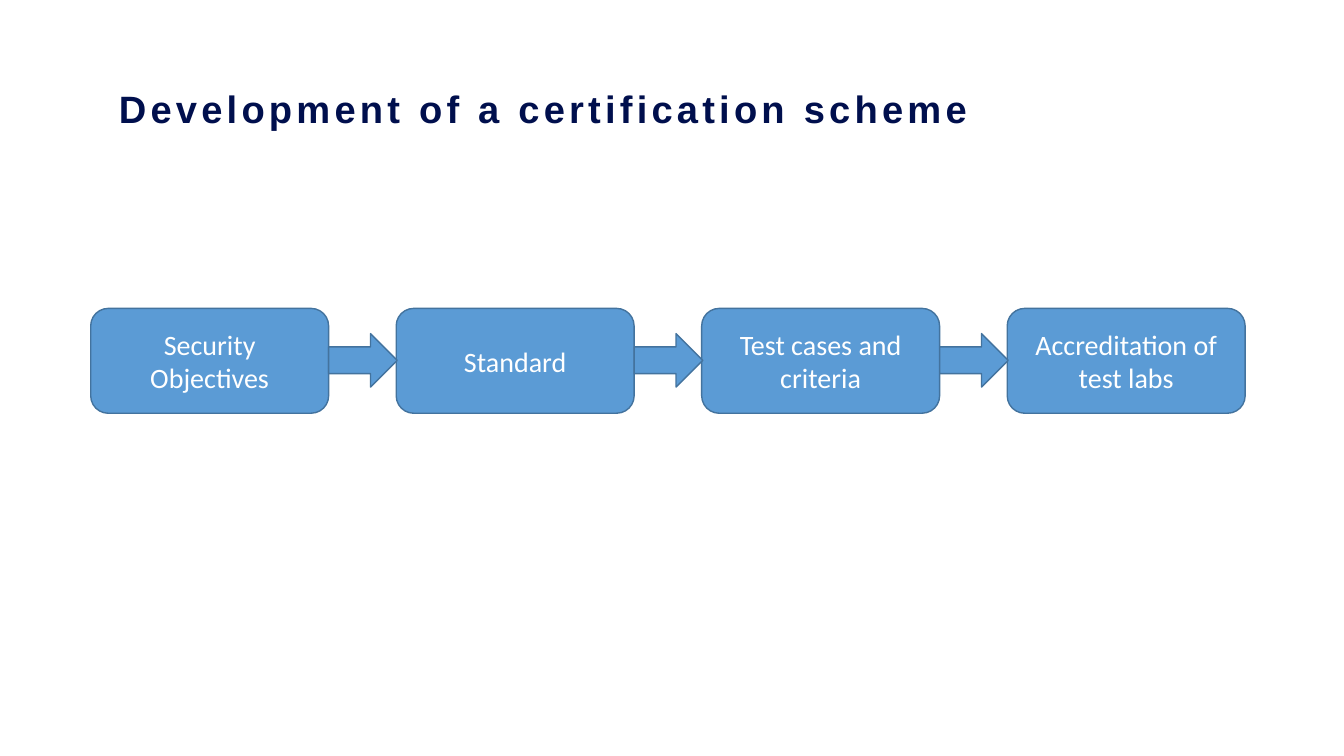
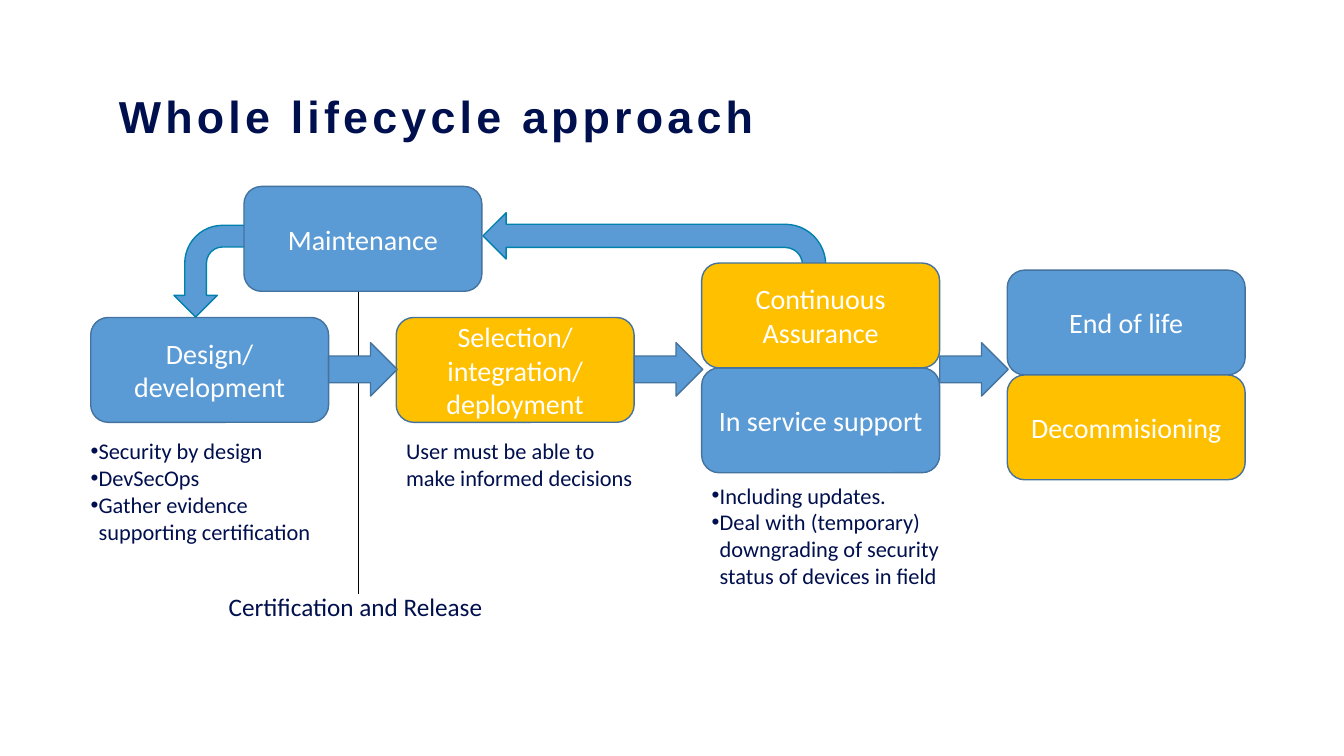
from lxml import etree
from pptx import Presentation
from pptx import util as u
from pptx.dml.color import RGBColor
from pptx.enum import shapes, text
from pptx.oxml import ns

# Shared style
NAVY, BLUE, AMBER, WHITE = "000F4D", "5B9BD5", "FFC000", "FFFFFF"
EDGE, LOOP_EDGE, RULE = "43739E", "0081AD", "000000"
BOX_WIDTH, BOX_HEIGHT = 2.36, 1.04
ARROW_WIDTH, ARROW_HEIGHT, ARROW_DROP = 0.68, 0.53, 0.25
COLUMNS = [0.9 + 3.03 * step for step in range(4)]
KIND = shapes.MSO_SHAPE


def color(value):
    return RGBColor.from_string(value)


def place(left, top, width, height):
    return [u.Inches(length) for length in (left, top, width, height)]


def style_text(para, size, value, font="Calibri"):
    for span in para.runs:
        span.font.size = u.Pt(size)
        span.font.name = font
        span.font.color.rgb = color(value)


def add_title(page, words, size, line_spacing):
    box = page.shapes.add_textbox(*place(1.08, 0.89, 9.29, 0.58))
    box.text_frame.word_wrap = True
    box.text_frame.text = words
    para = box.text_frame.paragraphs[0]
    para.line_spacing = line_spacing
    style_text(para, size, NAVY, "Arial")
    font = para.runs[0].font
    font.bold = True
    para.runs[0]._r.get_or_add_rPr().set("spc", "300")


def add_filled(page, kind, frame, fill=BLUE, edge=EDGE):
    shape = page.shapes.add_shape(kind, *place(*frame))
    shape.shadow.inherit = False
    shape.fill.solid()
    shape.fill.fore_color.rgb = color(fill)
    shape.line.color.rgb = color(edge)
    shape.line.width = u.Pt(1)
    return shape


def add_stage(page, words, left, top, fill=BLUE):
    box = add_filled(page, KIND.ROUNDED_RECTANGLE,
                     (left, top, BOX_WIDTH, BOX_HEIGHT), fill)
    frame = box.text_frame
    frame.word_wrap = True
    frame.vertical_anchor = text.MSO_ANCHOR.MIDDLE
    frame.text = words
    for para in frame.paragraphs:
        para.alignment = text.PP_ALIGN.CENTER
        style_text(para, 20, WHITE)


def add_flow_arrows(page, row_top):
    for left in COLUMNS[:-1]:
        add_filled(page, KIND.RIGHT_ARROW,
                   (left + BOX_WIDTH, row_top + ARROW_DROP,
                    ARROW_WIDTH, ARROW_HEIGHT))


def add_loop_arrow(page, frame, rotation=0):
    arrow = add_filled(page, KIND.BENT_ARROW, frame, edge=LOOP_EDGE)
    arrow.rotation = rotation
    arrow._element.spPr.find(ns.qn("a:xfrm")).set("flipH", "1")


def add_note(page, lines, frame, size=16, bullets=False, wrap=True):
    box = page.shapes.add_textbox(*place(*frame))
    box.text_frame.word_wrap = wrap
    box.text_frame.auto_size = text.MSO_AUTO_SIZE.SHAPE_TO_FIT_TEXT
    box.text_frame.text = "\n".join(lines)
    for para in box.text_frame.paragraphs:
        if bullets:
            props = para._p.get_or_add_pPr()
            indent = u.Inches(0.08)
            props.set("marL", str(indent))
            props.set("indent", str(-indent))
            etree.SubElement(props, ns.qn("a:buFont"), typeface="Arial")
            etree.SubElement(props, ns.qn("a:buChar"), char="•")
        style_text(para, size, NAVY)


def add_rule(page, left, top, bottom):
    rule = page.shapes.add_connector(
        shapes.MSO_CONNECTOR.STRAIGHT, *place(left, top, left, bottom))
    rule.line.color.rgb = color(RULE)
    rule.line.width = u.Pt(0.5)
    etree.SubElement(rule._element.spPr, ns.qn("a:effectLst"))


def build_scheme(page):
    row_top = 3.06
    add_title(page, "Development of a certification scheme", 27.2, 0.8)
    stages = ("Security Objectives", "Standard",
              "Test cases and criteria", "Accreditation of test labs")
    for left, words in zip(COLUMNS, stages):
        add_stage(page, words, left, row_top)
    add_flow_arrows(page, row_top)


def build_lifecycle(page):
    row_top, support_top, end_top = 3.15, 3.65, 2.68
    design, selection, support, end = COLUMNS
    add_rule(page, 3.55, 2.64, 5.89)
    add_title(page, "Whole lifecycle approach", 32, 0.9)

    # Main flow
    add_stage(page, "Design/\ndevelopment", design, row_top)
    add_stage(page, "Selection/integration/deployment",
              selection, row_top, AMBER)
    add_stage(page, "In service support", support, support_top)
    add_stage(page, "End of life", end, end_top)
    add_stage(page, "Decommisioning", end, end_top + BOX_HEIGHT, AMBER)
    add_flow_arrows(page, row_top)

    # Notes under the stages
    add_note(page, ["Certification and Release"], (2.17, 5.82, 2.75, 0.4),
             size=18, wrap=False)
    add_note(page, ["Security by design", "DevSecOps",
                    "Gather evidence supporting certification"],
             (0.8, 4.29, 2.75, 1.18), bullets=True)
    add_note(page, ["User must be able to make informed decisions"],
             (selection, 4.29, 2.52, 0.64))
    add_note(page, ["Including updates.",
                    "Deal with (temporary) downgrading of security "
                    "status of devices in field"],
             (support, 4.73, 2.52, 1.18), bullets=True)

    # Maintenance loop, with the stages covering the arrow tails
    add_loop_arrow(page, (4.79, 2.11, 3.4, 0.92))
    add_stage(page, "Continuous Assurance", support,
              support_top - BOX_HEIGHT, AMBER)
    add_loop_arrow(page, (1.7, 2.26, 0.91, 0.86), rotation=270)
    add_stage(page, "Maintenance", 2.42, 1.85)


def main():
    deck = Presentation()
    deck.slide_width, deck.slide_height = u.Inches(13.33), u.Inches(7.5)
    for build in (build_scheme, build_lifecycle):
        build(deck.slides.add_slide(deck.slide_layouts[6]))
    deck.save("out.pptx")


if __name__ == "__main__":
    main()
